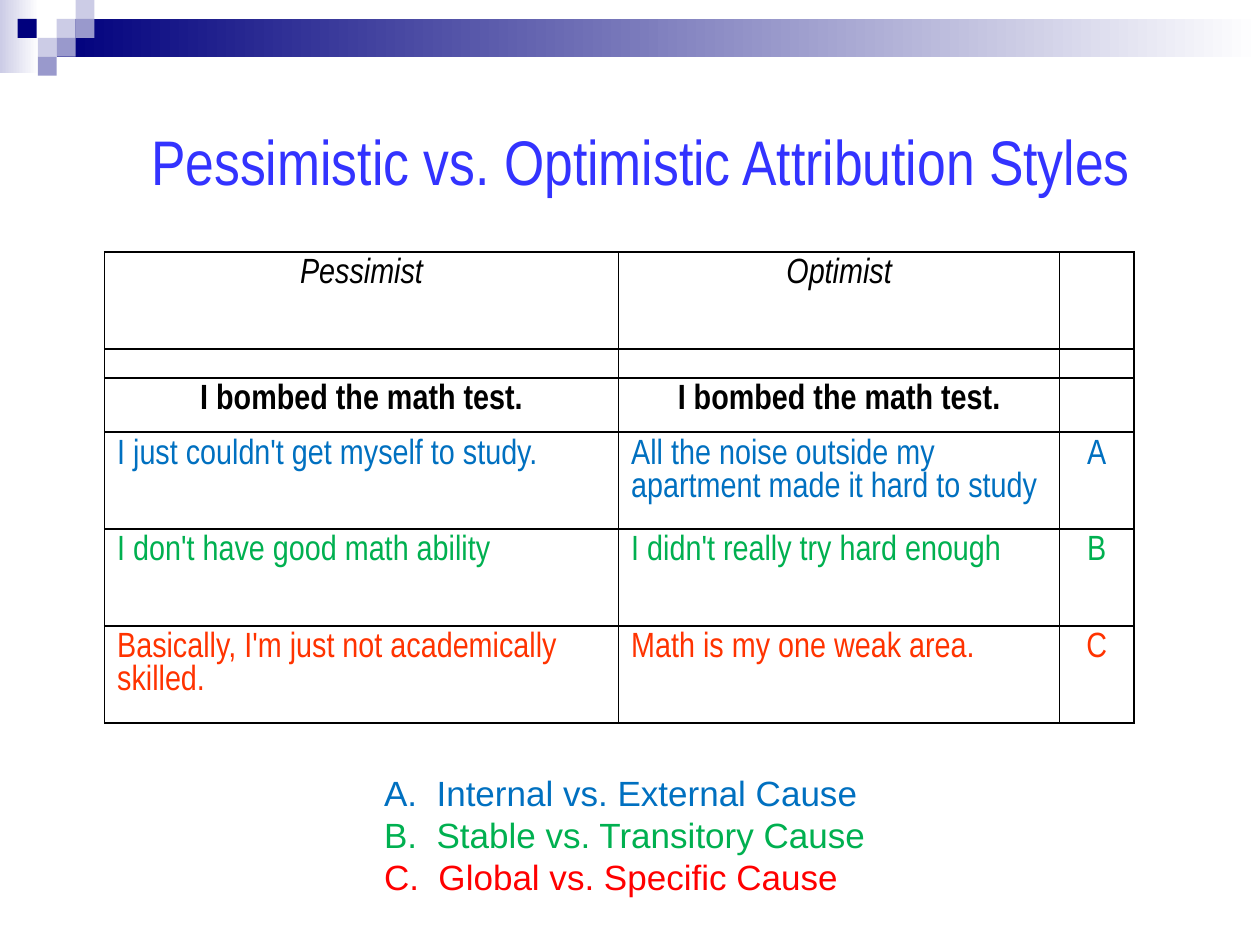
from lxml import etree
from pptx import Presentation
from pptx import util as u
from pptx.dml.color import RGBColor
from pptx.enum import shapes, text
from pptx.oxml import ns

COLORS = {"navy": "00007D", "lilac": "CCCCE6", "violet": "9999CC", "white": "FFFFFF",
          "title": "3333FF", "black": "000000", "blue": "0070C0", "green": "00B050",
          "orange": "FF3300", "red": "FF0000"}


def add_run(p, words, font, size, color, bold=False, italic=False):
    r = p.add_run()
    r.text = words
    r.font.name, r.font.size = font, u.Pt(size)
    r.font.bold, r.font.italic = bold, italic
    r.font.color.rgb = RGBColor.from_string(COLORS[color])


def add_rect(left, top, width, height, *colors):
    sp = s.shapes.add_shape(shapes.MSO_SHAPE.RECTANGLE, u.Inches(left), u.Inches(top),
                            u.Inches(width), u.Inches(height))
    sp.shadow.inherit = False
    sp.line.fill.background()
    if len(colors) == 1:
        sp.fill.solid()
        sp.fill.fore_color.rgb = RGBColor.from_string(COLORS[colors[0]])
    else:
        sp.fill.gradient()
        sp.fill.gradient_angle = 0
        for stop, color in zip(sp.fill.gradient_stops, colors):
            stop.color.rgb = RGBColor.from_string(COLORS[color])


prs = Presentation()
prs.slide_width, prs.slide_height = u.Inches(10), u.Inches(7.5)
s = prs.slides.add_slide(prs.slide_layouts[6])

# Header band and its small squares
add_rect(0, 0, 0.31, 0.58, "lilac", "white")
add_rect(0.45, 0.15, 9.55, 0.3, "navy", "white")
for left, top, color in [(0.45, 0.15, "lilac"), (0.6, 0, "lilac"), (0.6, 0.15, "violet"),
                         (0.3, 0.3, "lilac"), (0.14, 0.15, "navy"),
                         (0.45, 0.3, "violet"), (0.3, 0.45, "violet")]:
    add_rect(left, top, 0.15, 0.15, color)

# Attribution table: row height, colour, bold, italic, words
rows = [
    (0.77, "black", False, True, ["Pessimist", "Optimist", ""]),
    (0.23, "black", False, False, ["", "", ""]),
    (0.43, "black", True, False, ["I bombed the math test.", "I bombed the math test.", ""]),
    (0.77, "blue", False, False, ["I just couldn't get myself to study.",
                                  "All the noise outside my apartment made it hard to study", "A"]),
    (0.77, "green", False, False, ["I don't have good math ability",
                                   "I didn't really try hard enough", "B"]),
    (0.77, "orange", False, False, ["Basically, I'm just not academically skilled.",
                                    "Math is my one weak area.", "C"]),
]
table = s.shapes.add_table(len(rows), 3, u.Inches(0.83), u.Inches(2),
                           u.Inches(8.17), u.Inches(3.74)).table
table.first_row = table.horz_banding = False
for column, width in zip(table.columns, [4.08, 3.5, 0.59]):
    column.width = u.Inches(width)
for i, (height, color, bold, italic, words) in enumerate(rows):
    table.rows[i].height = u.Inches(height)
    for j, word in enumerate(words):
        cell = table.cell(i, j)
        tcPr = cell._tc.get_or_add_tcPr()
        for side in ("lnL", "lnR", "lnT", "lnB"):
            ln = etree.SubElement(tcPr, ns.qn("a:" + side), w=str(u.Pt(1)))
            fill = etree.SubElement(ln, ns.qn("a:solidFill"))
            etree.SubElement(fill, ns.qn("a:srgbClr"), val=COLORS["black"])
        cell.fill.background()
        cell.margin_left = cell.margin_right = u.Inches(0.1)
        cell.margin_top = cell.margin_bottom = u.Inches(0.05)
        p = cell.text_frame.paragraphs[0]
        centred = i < 3 or j == 2
        p.alignment = text.PP_ALIGN.CENTER if centred else text.PP_ALIGN.LEFT
        if word:
            add_run(p, word, "Arial Narrow", 20, color, bold, italic)
        else:  # keeps an empty cell from stretching its row
            etree.SubElement(p._p, ns.qn("a:endParaRPr"), sz="700")

# Legend of the three dimensions
tf = s.shapes.add_textbox(u.Inches(2.95), u.Inches(6.07), u.Inches(4.13), u.Inches(1.1)).text_frame
tf.word_wrap = True
tf.vertical_anchor = text.MSO_ANCHOR.MIDDLE
legend = [("A.  Internal vs. External Cause", "blue"),
          ("B.  Stable vs. Transitory Cause", "green"),
          ("C.  Global vs. Specific Cause", "red")]
for k, (words, color) in enumerate(legend):
    p = tf.add_paragraph() if k else tf.paragraphs[0]
    add_run(p, words, "Arial", 20, color)

# Title
tf = s.shapes.add_textbox(u.Inches(0.92), u.Inches(0.92), u.Inches(8.33), u.Inches(0.7)).text_frame
tf.word_wrap = True
p = tf.paragraphs[0]
p.alignment = text.PP_ALIGN.CENTER
add_run(p, "Pessimistic vs. Optimistic Attribution Styles", "Arial Narrow", 36, "title")

prs.save("out.pptx")
